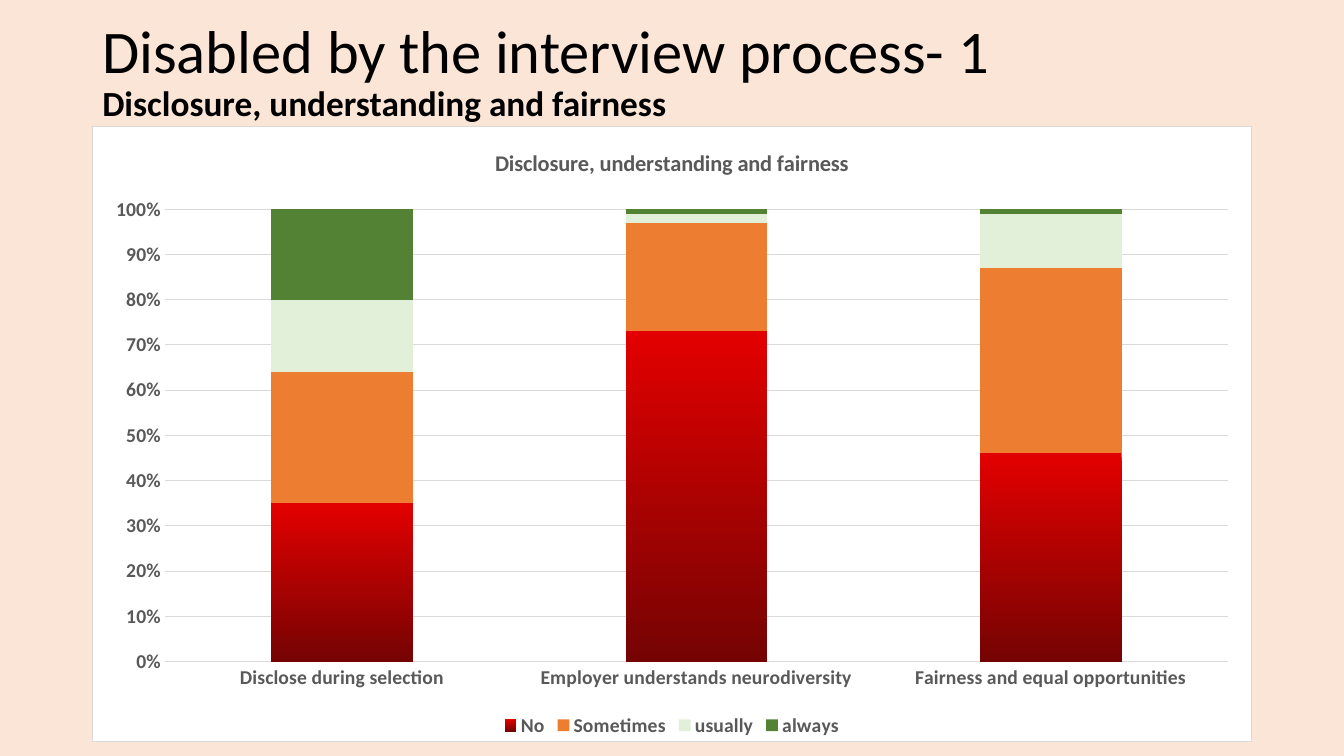
import pptx
import pptx.chart.data
import pptx.dml.color
import pptx.enum.chart
import pptx.enum.text
import pptx.oxml
import pptx.oxml.ns
import pptx.util

Pt = pptx.util.Pt
RGBColor = pptx.dml.color.RGBColor

BLACK = RGBColor(0x00, 0x00, 0x00)
PEACH = RGBColor(0xFB, 0xE5, 0xD6)
GREY_TEXT = RGBColor(0x59, 0x59, 0x59)
GREY_LINE = RGBColor(0xD9, 0xD9, 0xD9)
WHITE = RGBColor(0xFF, 0xFF, 0xFF)
RED = RGBColor(0xE3, 0x00, 0x00)
DARK_RED = RGBColor(0x76, 0x03, 0x03)
ORANGE = RGBColor(0xED, 0x7D, 0x31)
PALE_GREEN = RGBColor(0xE2, 0xF0, 0xD9)
GREEN = RGBColor(0x54, 0x82, 0x35)

FONT = "Calibri"
SUBTITLE = "Disclosure, understanding and fairness"
HEADING = [("Disabled by the interview process- 1", 43.2, False), (SUBTITLE, 25.2, True)]
CATEGORIES = [
    "Disclose during selection",
    "Employer understands neurodiversity",
    "Fairness and equal opportunities",
]
SERIES = [
    ("No", (35, 73, 46), (RED, DARK_RED)),
    ("Sometimes", (29, 24, 41), (ORANGE,)),
    ("usually", (16, 2, 12), (PALE_GREEN,)),
    ("always", (20, 1, 1), (GREEN,)),
]

LEFT, WIDTH = 66, 828
HEADING_TOP, HEADING_HEIGHT = 28.8, 46
CHART_TOP, CHART_HEIGHT = 90, 440


def style_font(font, size, color, bold):
    font.name = FONT
    font.size = Pt(size)
    font.bold = bold
    font.color.rgb = color


def style_line(line):
    line.color.rgb = GREY_LINE
    line.width = Pt(0.75)


def add_heading(slide):
    box = slide.shapes.add_textbox(Pt(LEFT), Pt(HEADING_TOP), Pt(WIDTH), Pt(HEADING_HEIGHT))
    frame = box.text_frame
    frame.word_wrap = True
    frame.vertical_anchor = pptx.enum.text.MSO_ANCHOR.MIDDLE
    paragraph = frame.paragraphs[0]
    paragraph.line_spacing = 0.9
    for index, (text, size, bold) in enumerate(HEADING):
        if index:
            paragraph.add_line_break()
        run = paragraph.add_run()
        run.text = text
        style_font(run.font, size, BLACK, bold)


def frame_chart(chart):
    """Give the chart area a white fill and a thin grey border."""
    area = pptx.oxml.parse_xml(
        f'<c:spPr {pptx.oxml.ns.nsdecls("c", "a")}>'
        f'<a:solidFill><a:srgbClr val="{WHITE}"/></a:solidFill>'
        f'<a:ln w="{Pt(0.75)}"><a:solidFill><a:srgbClr val="{GREY_LINE}"/></a:solidFill></a:ln>'
        "</c:spPr>"
    )
    chart.element.find(pptx.oxml.ns.qn("c:chart")).addnext(area)


def fill_series(fill, colors):
    if len(colors) == 1:
        fill.solid()
        fill.fore_color.rgb = colors[0]
        return
    fill.gradient()
    fill.gradient_angle = 270
    for stop, color in zip(fill.gradient_stops, colors):
        stop.color.rgb = color


def add_answer_chart(slide):
    data = pptx.chart.data.CategoryChartData()
    data.categories = CATEGORIES
    for name, values, _ in SERIES:
        data.add_series(name, values)
    chart = slide.shapes.add_chart(
        pptx.enum.chart.XL_CHART_TYPE.COLUMN_STACKED_100,
        Pt(LEFT), Pt(CHART_TOP), Pt(WIDTH), Pt(CHART_HEIGHT), data,
    ).chart
    style_font(chart.font, 10, BLACK, False)
    frame_chart(chart)

    chart.has_title = True
    title = chart.chart_title.text_frame
    title.text = SUBTITLE
    style_font(title.paragraphs[0].font, 16, GREY_TEXT, True)
    chart.chart_title.include_in_layout = False

    chart.has_legend = True
    chart.legend.position = pptx.enum.chart.XL_LEGEND_POSITION.BOTTOM
    chart.legend.include_in_layout = False
    style_font(chart.legend.font, 14, GREY_TEXT, True)

    for axis in (chart.category_axis, chart.value_axis):
        axis.major_tick_mark = pptx.enum.chart.XL_TICK_MARK.NONE
        axis.minor_tick_mark = pptx.enum.chart.XL_TICK_MARK.NONE
        style_font(axis.tick_labels.font, 14, GREY_TEXT, True)
    style_line(chart.category_axis.format.line)
    chart.value_axis.format.line.fill.background()
    style_line(chart.value_axis.major_gridlines.format.line)
    chart.value_axis.tick_labels.number_format = "0%"
    chart.value_axis.tick_labels.number_format_is_linked = False

    plot = chart.plots[0]
    plot.gap_width = 150
    plot.overlap = 100
    plot.vary_by_categories = False
    for series, (_, _, colors) in zip(plot.series, SERIES):
        fill_series(series.format.fill, colors)


def main():
    presentation = pptx.Presentation()
    presentation.slide_width = Pt(960)
    presentation.slide_height = Pt(540)
    slide = presentation.slides.add_slide(presentation.slide_layouts[6])
    slide.background.fill.solid()
    slide.background.fill.fore_color.rgb = PEACH
    add_heading(slide)
    add_answer_chart(slide)
    presentation.save("out.pptx")


if __name__ == "__main__":
    main()
